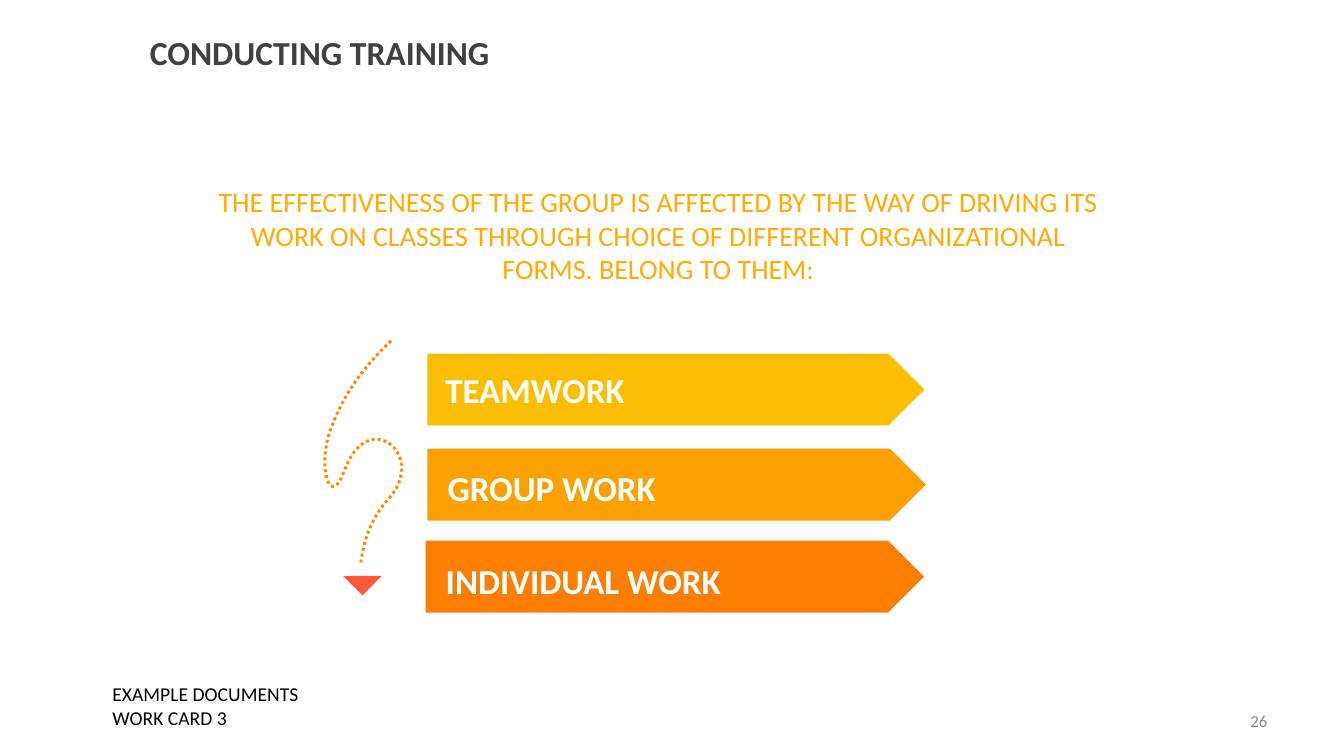
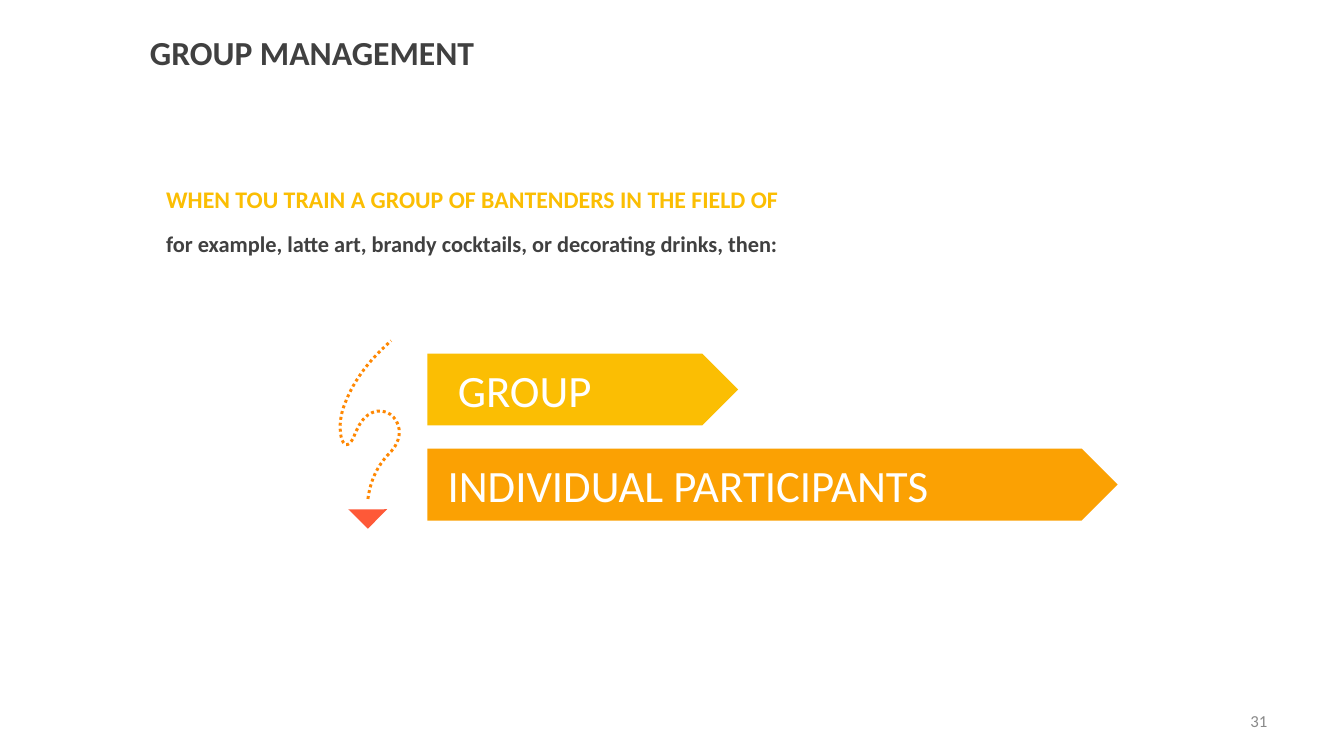
import pptx
import pptx.dml.color
import pptx.enum.dml
import pptx.enum.shapes
import pptx.enum.text
import pptx.util

Pt = pptx.util.Pt
ALIGN = pptx.enum.text.PP_ALIGN
ANCHOR = pptx.enum.text.MSO_ANCHOR
SHAPE = pptx.enum.shapes.MSO_SHAPE

FONT = "Calibri"
COLORS = {
    "title": "404040",
    "number": "898989",
    "lead": "FFAC06",
    "ink": "000000",
    "white": "FFFFFF",
    "yellow": "FBBE03",
    "amber": "FBA103",
    "orange": "FD7E01",
    "trail": "FF8803",
    "tip": "FE5938",
}

SLIDE_SIZE = (960, 540)
TITLE_BOX = (100, 15, 499, 44.6)
NUMBER_BOX = (688.3, 500.4, 224, 28.8)
BANNER_HEIGHT = 51.4

TRAIL_START = (0, 1)
TRAIL_CURVES = [
    ((0.07, 0.93), (0.23, 0.81), (1, 0.7)),
    ((2.13, 0.51), (0.23, 0.3), (-0.53, 0.58)),
    ((-1, 0.77), (-1.47, 0.57), (-1, 0.4)),
    ((-0.47, 0.2), (0.4, 0.08), (1, 0)),
]
CURVE_STEPS = 16


def rgb(name):
    return pptx.dml.color.RGBColor.from_string(COLORS[name])


def write_text(frame, lines, size=24, color="ink", bold=False, align=ALIGN.LEFT,
               anchor=ANCHOR.TOP, after=0, inset=7.2, drop=3.6):
    frame.word_wrap = True
    frame.vertical_anchor = anchor
    frame.margin_left, frame.margin_top = Pt(inset), Pt(drop)
    frame.margin_right, frame.margin_bottom = Pt(7.2), Pt(3.6)
    for index, line in enumerate(lines):
        words, look = line if isinstance(line, tuple) else (line, {})
        paragraph = frame.paragraphs[0] if index == 0 else frame.add_paragraph()
        paragraph.alignment = align
        paragraph.space_after = Pt(after)
        run = paragraph.add_run()
        run.text = words
        run.font.name = FONT
        run.font.size = Pt(look.get("size", size))
        run.font.bold = bold
        run.font.color.rgb = rgb(look.get("color", color))


def add_text(slide, box, lines, **look):
    holder = slide.shapes.add_textbox(*map(Pt, box))
    write_text(holder.text_frame, lines, **look)


def add_solid(slide, preset, box, color):
    solid = slide.shapes.add_shape(preset, *map(Pt, box))
    solid.shadow.inherit = False
    solid.fill.solid()
    solid.fill.fore_color.rgb = rgb(color)
    solid.line.fill.background()
    return solid


def add_frame(deck, title, number):
    slide = deck.slides.add_slide(deck.slide_layouts[6])
    add_text(slide, TITLE_BOX, [title], color="title", bold=True, anchor=ANCHOR.MIDDLE)
    add_text(slide, NUMBER_BOX, [number], size=12, color="number",
             align=ALIGN.RIGHT, anchor=ANCHOR.MIDDLE)
    return slide


def add_banner(slide, left, top, width, label, color, **look):
    banner = add_solid(slide, SHAPE.PENTAGON, (left, top, width, BANNER_HEIGHT), color)
    write_text(banner.text_frame, [label], color="white", anchor=ANCHOR.MIDDLE, **look)


def curve_points():
    start = TRAIL_START
    for first, second, end in TRAIL_CURVES:
        for step in range(1, CURVE_STEPS + 1):
            t = step / CURVE_STEPS
            u = 1 - t
            yield tuple(u**3 * a + 3 * u * u * t * b + 3 * u * t * t * c + t**3 * d
                        for a, b, c, d in zip(start, first, second, end))
        start = end


def add_trail(slide, box, tip_left, tip_top):
    left, top, width, height = box

    def place(point):
        return Pt(left + point[0] * width), Pt(top + point[1] * height)

    builder = slide.shapes.build_freeform(*place(TRAIL_START))
    builder.add_line_segments([place(point) for point in curve_points()], close=False)
    trail = builder.convert_to_shape()
    trail.shadow.inherit = False
    trail.fill.background()
    trail.line.color.rgb = rgb("trail")
    trail.line.width = Pt(2.13)
    trail.line.dash_style = pptx.enum.dml.MSO_LINE.ROUND_DOT
    tip = add_solid(slide, SHAPE.RIGHT_TRIANGLE, (tip_left, tip_top, 19.6, 19.6), "tip")
    tip.rotation = 314.8


def build_training(deck):
    slide = add_frame(deck, "CONDUCTING TRAINING", "26")
    add_text(slide, (111.6, 128.2, 685.4, 80),
             ["THE EFFECTIVENESS OF THE GROUP IS AFFECTED BY THE WAY OF DRIVING ITS "
              "WORK ON CLASSES THROUGH CHOICE OF DIFFERENT ORGANIZATIONAL FORMS. "
              "BELONG TO THEM:"],
             size=20, color="lead", align=ALIGN.CENTER, after=12, inset=38.9)
    for left, top, width, label, color, inset, drop in [
        (305.3, 252.5, 355, "TEAMWORK", "yellow", 12.8, 3.6),
        (305.3, 320.4, 356, "GROUP WORK", "amber", 14.4, 8.4),
        (304, 386.2, 356, "INDIVIDUAL WORK", "orange", 14.4, 8.4),
    ]:
        add_banner(slide, left, top, width, label, color,
                   size=25, bold=True, inset=inset, drop=drop)
    add_trail(slide, (257.8, 243.4, 21.6, 158.4), 249.1, 401.6)
    add_text(slide, (73.2, 483.8, 232, 41), ["EXAMPLE DOCUMENTS", "WORK CARD 3"], size=14)


def build_management(deck):
    slide = add_frame(deck, "GROUP MANAGEMENT", "31")
    add_text(slide, (111.6, 128.2, 561, 59),
             [("WHEN TOU TRAIN A GROUP OF BANTENDERS IN THE FIELD OF",
               {"size": 17, "color": "yellow"}),
              ("for example, latte art, brandy cocktails, or decorating drinks, then:",
               {"size": 16, "color": "title"})],
             bold=True, after=12)
    for top, width, label, color, inset in [
        (252.5, 222, "GROUP", "yellow", 21.7),
        (320.4, 493, "INDIVIDUAL PARTICIPANTS", "amber", 14.4),
    ]:
        add_banner(slide, 305.3, top, width, label, color, size=32, inset=inset)
    add_trail(slide, (262.8, 243.4, 16.6, 113), 252.9, 354)


def main():
    deck = pptx.Presentation()
    deck.slide_width, deck.slide_height = map(Pt, SLIDE_SIZE)
    build_training(deck)
    build_management(deck)
    deck.save("out.pptx")


if __name__ == "__main__":
    main()
